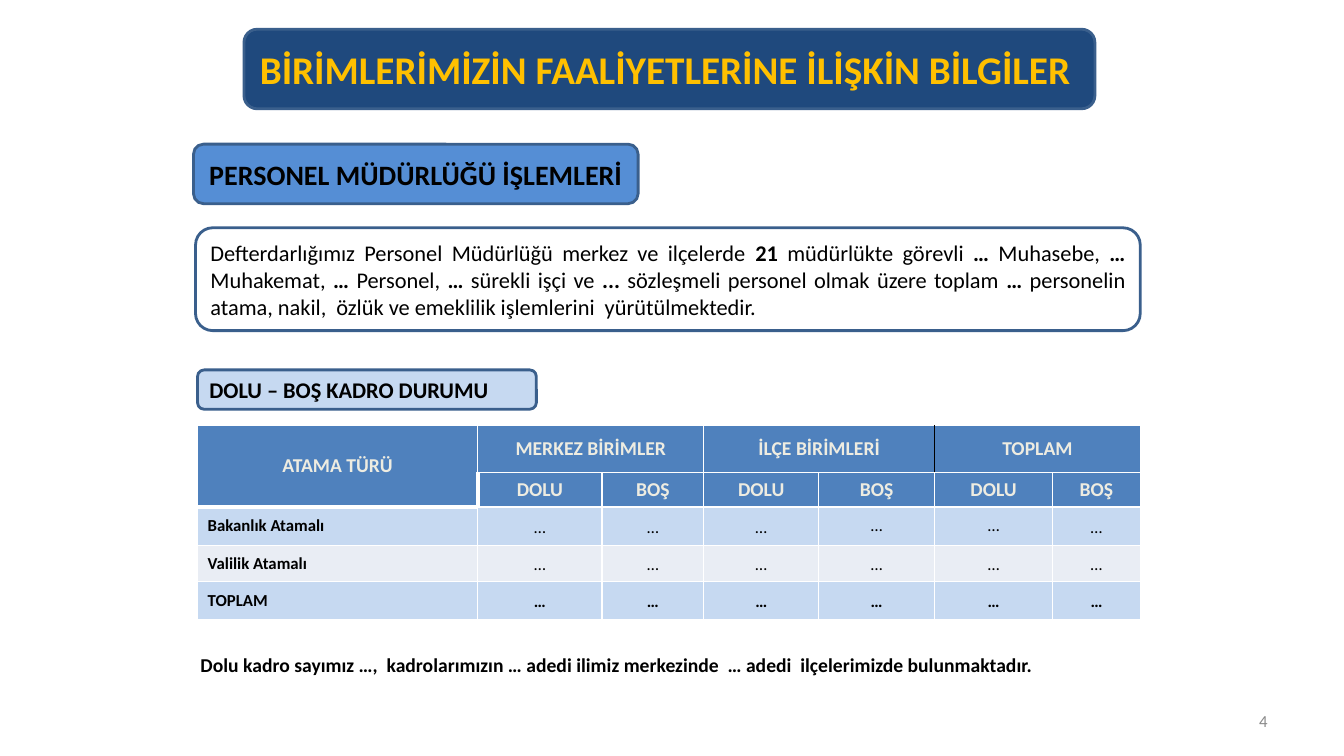
import pptx
import pptx.dml.color
import pptx.enum.shapes
import pptx.enum.text
import pptx.util
from lxml import etree
from pptx.oxml.ns import qn

RGBColor = pptx.dml.color.RGBColor
ALIGN = pptx.enum.text.PP_ALIGN
ANCHOR = pptx.enum.text.MSO_ANCHOR

BLACK = RGBColor(0x00, 0x00, 0x00)
WHITE = RGBColor(0xFF, 0xFF, 0xFF)
GOLD = RGBColor(0xFF, 0xC0, 0x00)
CREAM = RGBColor(0xEE, 0xEC, 0xE1)
GRAY = RGBColor(0x89, 0x89, 0x89)
NAVY = RGBColor(0x1F, 0x49, 0x7D)
OUTLINE_BLUE = RGBColor(0x3A, 0x5F, 0x8C)
MID_BLUE = RGBColor(0x55, 0x8E, 0xD5)
HEADER_BLUE = RGBColor(0x4F, 0x81, 0xBD)
LIGHT_BLUE = RGBColor(0xC6, 0xD9, 0xF1)
PALE_BLUE = RGBColor(0xE9, 0xED, 0xF4)


class SlideBuilder:
    """Places styled elements; lengths are percentages of the slide's size."""

    font_name = "Calibri"
    outline_width = pptx.util.Pt(2)

    def __init__(self, presentation):
        self.width = presentation.slide_width
        self.height = presentation.slide_height
        self.slide = presentation.slides.add_slide(presentation.slide_layouts[6])

    def across(self, share):
        return round(self.width * share / 100)

    def down(self, share):
        return round(self.height * share / 100)

    def area(self, left, top, width, height):
        return self.across(left), self.down(top), self.across(width), self.down(height)

    def add_text(self, frame, text, size, color=BLACK, bold=False, **paragraph_format):
        """Fill the frame; each asterisk in the text switches bold on or off."""
        frame.word_wrap = True
        paragraph = frame.paragraphs[0]
        for name, value in paragraph_format.items():
            setattr(paragraph, name, value)
        for index, part in enumerate(text.split("*")):
            run = paragraph.add_run()
            run.text = part
            run.font.color.rgb = color
            font_format = {"name": self.font_name, "size": pptx.util.Pt(size),
                           "bold": bold or index % 2 == 1}
            for name, value in font_format.items():
                setattr(run.font, name, value)

    def box(self, area, fill, text, size, **style):
        rounded = pptx.enum.shapes.MSO_SHAPE.ROUNDED_RECTANGLE
        shape = self.slide.shapes.add_shape(rounded, *self.area(*area))
        shape.shadow.inherit = False
        if fill is None:
            shape.fill.background()
        else:
            shape.fill.solid()
            shape.fill.fore_color.rgb = fill
        shape.line.color.rgb = OUTLINE_BLUE
        shape.line.width = self.outline_width
        shape.text_frame.vertical_anchor = ANCHOR.MIDDLE
        self.add_text(shape.text_frame, text, size, **style)

    def label(self, area, text, size, anchor=ANCHOR.TOP, **style):
        shape = self.slide.shapes.add_textbox(*self.area(*area))
        shape.text_frame.vertical_anchor = anchor
        self.add_text(shape.text_frame, text, size, **style)

    def table(self, area, columns, rows):
        shape = self.slide.shapes.add_table(len(rows), len(columns), *self.area(*area))
        table = shape.table
        table.first_row = table.horz_banding = False
        for column, share in zip(table.columns, columns):
            column.width = self.across(share)
        for row, share in zip(table.rows, rows):
            row.height = self.down(share)
        return table

    def cell(self, cell, fill, borders, margins):
        """Set borders, given as side: (colour, points), then fill and margins."""
        properties = cell._tc.get_or_add_tcPr()
        for side in "LRTB":
            color, points = borders.get(side, (WHITE, 1))
            line = etree.SubElement(properties, qn(f"a:ln{side}"), w=str(pptx.util.Pt(points)))
            solid = etree.SubElement(line, qn("a:solidFill"))
            etree.SubElement(solid, qn("a:srgbClr"), val=str(color))
        cell.fill.solid()
        cell.fill.fore_color.rgb = fill
        horizontal, vertical = (pptx.util.Inches(margin) for margin in margins)
        cell_format = {"margin_left": horizontal, "margin_right": horizontal,
                       "margin_top": vertical, "margin_bottom": vertical,
                       "vertical_anchor": ANCHOR.MIDDLE}
        for name, value in cell_format.items():
            setattr(cell, name, value)


def add_staff_table(builder):
    table = builder.table((14.7, 56.27, 70.14, 25.73),
                          columns=(20.86, 9.23, 7.58, 8.55, 8.63, 8.78, 6.53),
                          rows=(6.27, 4.53, 5.07, 4.8, 5.07))
    groups = ("MERKEZ BİRİMLER", "İLÇE BİRİMLERİ", "TOPLAM")
    row_names = ("Bakanlık Atamalı", "Valilik Atamalı", "TOPLAM")
    thick, dark = (WHITE, 3), (BLACK, 1)
    special_borders = {
        (0, 0): {"B": thick}, (1, 0): {"B": thick, "R": thick},
        (1, 1): {"L": thick}, (2, 0): {"T": thick},
        (0, 3): {"R": dark}, (0, 4): {"R": dark}, (0, 5): {"L": dark},
    }

    # Cell fills, borders and margins
    for row in range(5):
        for column in range(7):
            fill = HEADER_BLUE if row < 2 else (LIGHT_BLUE, PALE_BLUE)[row % 2]
            margins = (0.05, 0) if row > 1 and column else (0.1, 0.05)
            builder.cell(table.cell(row, column), fill,
                         special_borders.get((row, column), {}), margins)

    # Two-level header
    def add_header(row, column, text):
        builder.add_text(table.cell(row, column).text_frame, text, 14, CREAM, True,
                         alignment=ALIGN.CENTER)

    table.cell(0, 0).merge(table.cell(1, 0))
    add_header(0, 0, "ATAMA TÜRÜ")
    for index, group in enumerate(groups):
        first = 1 + 2 * index
        table.cell(0, first).merge(table.cell(0, first + 1))
        add_header(0, first, group)
        add_header(1, first, "DOLU")
        add_header(1, first + 1, "BOŞ")

    # Row names and values
    for row, name in enumerate(row_names, start=2):
        builder.add_text(table.cell(row, 0).text_frame, name, 12, bold=True)
        for column in range(1, 7):
            spacing = 1.0 if row == 2 and column in (4, 5) else 1.15
            builder.add_text(table.cell(row, column).text_frame, "…", 12, bold=row == 4,
                             alignment=ALIGN.CENTER, line_spacing=spacing)


def main():
    presentation = pptx.Presentation()
    presentation.slide_width = pptx.util.Inches(13.33)
    presentation.slide_height = pptx.util.Inches(7.5)
    builder = SlideBuilder(presentation)

    # Department heading and summary
    builder.box((14.4, 19.07, 33.08, 7.87), MID_BLUE, "PERSONEL MÜDÜRLÜĞÜ İŞLEMLERİ", 20,
                bold=True, alignment=ALIGN.CENTER)
    builder.box((14.55, 30.13, 70.29, 13.6), None,
                "Defterdarlığımız Personel Müdürlüğü merkez ve ilçelerde *21 *müdürlükte görevli "
                "*… *Muhasebe, *… *Muhakemat, *… *Personel, *… *sürekli işçi ve *... *sözleşmeli "
                "personel olmak üzere toplam *… *personelin atama, nakil,  özlük ve emeklilik "
                "işlemlerini  yürütülmektedir.", 16, alignment=ALIGN.JUSTIFY)

    # Slide title
    builder.box((18.15, 3.87, 63.32, 10.53), NAVY,
                "BİRİMLERİMİZİN FAALİYETLERİNE İLİŞKİN BİLGİLER ", 28,
                color=GOLD, bold=True, alignment=ALIGN.CENTER)

    # Closing remark
    builder.label((14.18, 85.73, 70.89, 4.53),
                  "Dolu kadro sayımız …,  kadrolarımızın … adedi ilimiz merkezinde  … adedi  "
                  "ilçelerimizde bulunmaktadır.", 14, bold=True)

    # Staff table, page number and table heading
    add_staff_table(builder)
    builder.label((71.72, 92.67, 23.33, 5.33), "4", 12, ANCHOR.MIDDLE,
                  color=GRAY, alignment=ALIGN.RIGHT)
    builder.box((14.7, 48.93, 25.21, 5.2), LIGHT_BLUE, "DOLU – BOŞ KADRO DURUMU", 16,
                bold=True, alignment=ALIGN.LEFT)

    presentation.save("out.pptx")


if __name__ == "__main__":
    main()
